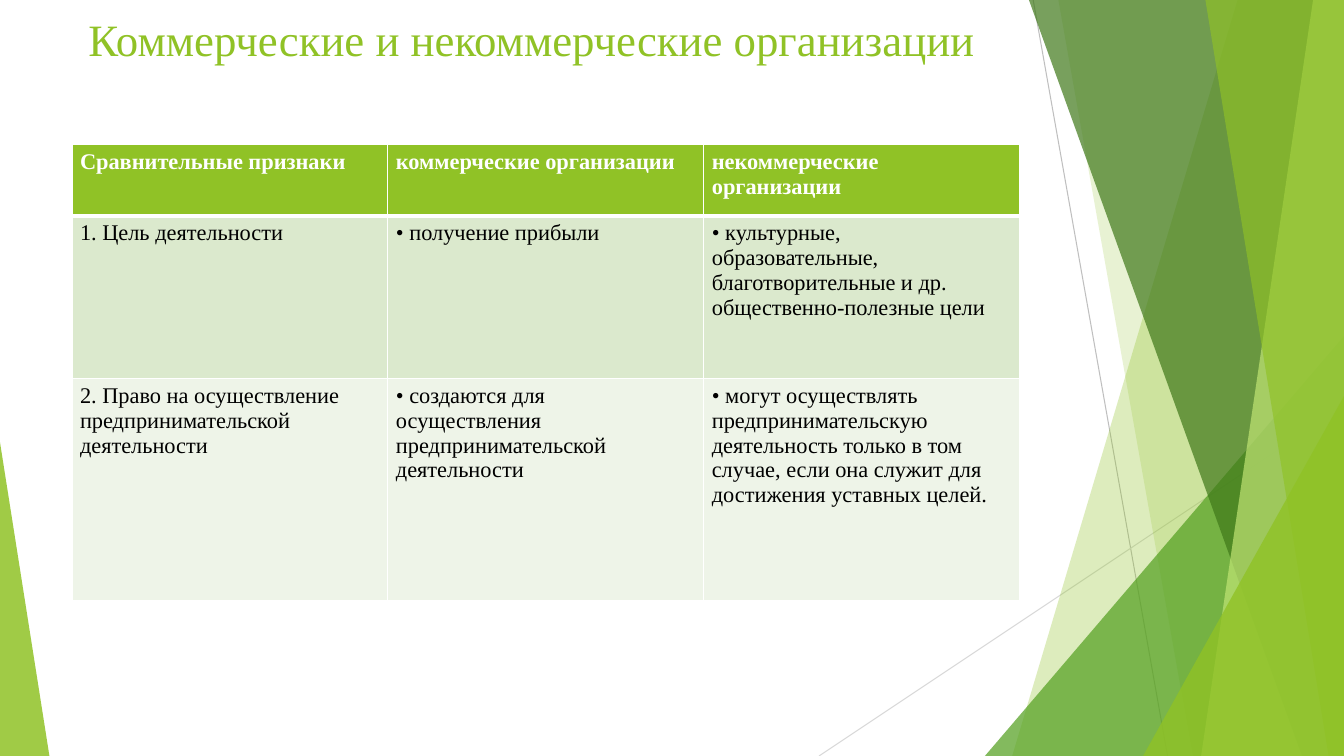
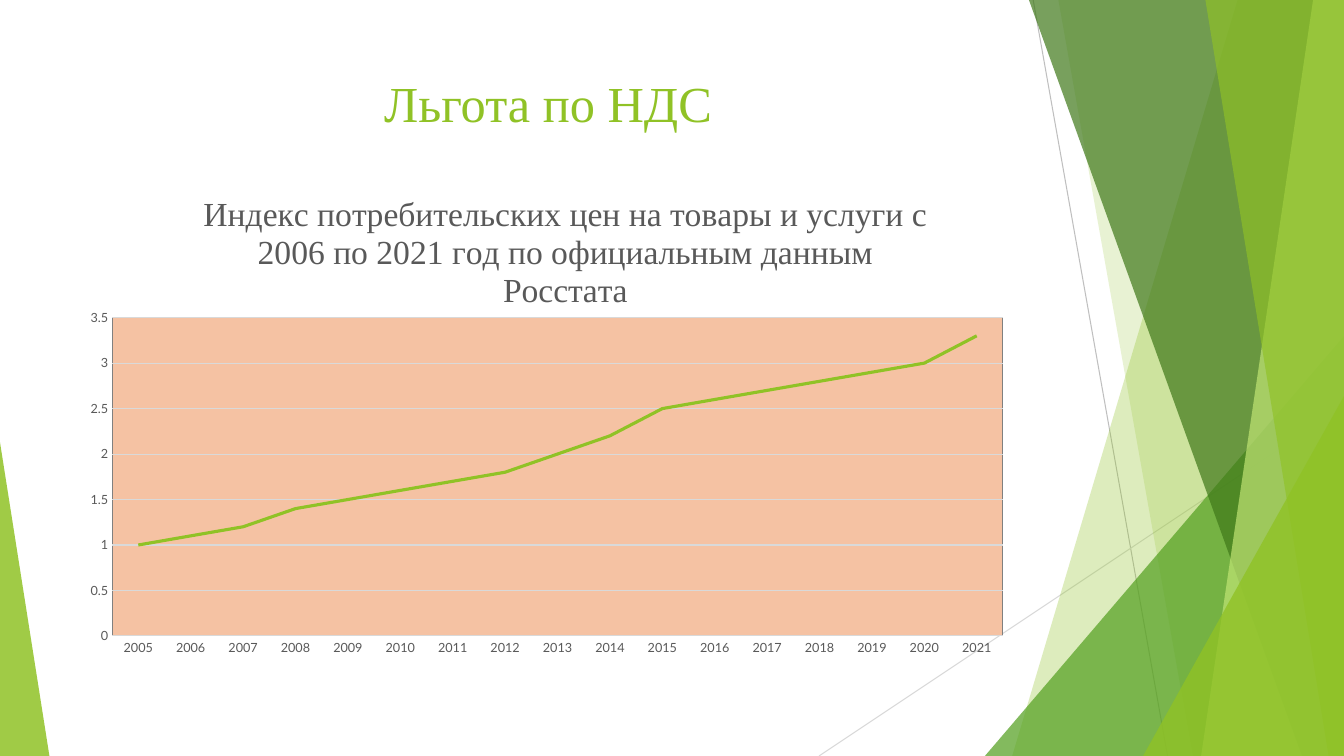
import lxml.etree
import pptx
import pptx.chart.data
import pptx.dml.color
import pptx.enum.chart
import pptx.enum.shapes
import pptx.enum.text
import pptx.oxml
import pptx.oxml.ns
import pptx.util

Pt = pptx.util.Pt
qn = pptx.oxml.ns.qn
ALIGN = pptx.enum.text.PP_ALIGN
NAMESPACES = pptx.oxml.ns.nsdecls("a", "c")

WIDTH, HEIGHT = 960, 540
GREEN, LEAF, FOREST, LIME = "90C226", "54A021", "3F7819", "C0E474"
WHITE, BLACK, GREY, SILVER, TEXT_GREY = "FFFFFF", "000000", "BFBFBF", "D9D9D9", "595959"
SERIF, SANS = "Times New Roman", "Lato"


def color(value):
    return pptx.dml.color.RGBColor.from_string(value)


def style_font(font, size, ink, name, bold=False):
    font.size = Pt(size)
    font.name = name
    font.bold = bold
    font.color.rgb = color(ink)


def write_text(frame, text, size=16, ink=BLACK, name=SERIF, bold=False, align=ALIGN.LEFT):
    para = frame.paragraphs[0]
    para.alignment = align
    span = para.add_run()
    span.text = text
    style_font(span.font, size, ink, name, bold)


def manual_layout(left, top, width=None, height=None):
    inner = "" if width is None else '<c:layoutTarget val="inner"/>'
    sizes = "" if width is None else f'<c:w val="{width}"/><c:h val="{height}"/>'
    return pptx.oxml.parse_xml(
        f'<c:layout {NAMESPACES}><c:manualLayout>{inner}<c:xMode val="edge"/><c:yMode val="edge"/>'
        f'<c:x val="{left}"/><c:y val="{top}"/>{sizes}</c:manualLayout></c:layout>')


def drop_layout(element):
    for layout in element.findall(qn("c:layout")):
        element.remove(layout)


class SlideBuilder:
    def __init__(self, deck):
        self.deck = deck
        self.page = None

    def start(self):
        self.page = self.deck.slides.add_slide(self.deck.slide_layouts[6])
        self.backdrop()

    def backdrop(self):
        self.line(738, 0, 834, HEIGHT, GREY)
        self.line(WIDTH, 290, 585, HEIGHT, SILVER)
        self.band(884, 723, GREEN, 30)
        self.band(756, 852, GREEN, 20)
        self.triangle(703.5, 240, 256.5, 1, LEAF, 72)
        self.band(735, 930, FOREST, 70)
        self.band(938, 858, LIME, 70)
        self.band(861, 949, GREEN, 65)
        self.triangle(816.5, 283, 143.5, 1, GREEN, 80)
        self.triangle(0, 316, 35.3, 0, GREEN, 85)

    def line(self, x1, y1, x2, y2, ink):
        connector = self.page.shapes.add_connector(
            pptx.enum.shapes.MSO_CONNECTOR.STRAIGHT, Pt(x1), Pt(y1), Pt(x2), Pt(y2))
        connector.line.color.rgb = color(ink)
        connector.line.width = Pt(0.75)
        lxml.etree.SubElement(connector.element.spPr, qn("a:effectLst"))

    def paint(self, shape, ink, opacity):
        shape.shadow.inherit = False
        shape.line.fill.background()
        shape.fill.solid()
        shape.fill.fore_color.rgb = color(ink)
        swatch = shape.element.spPr.find(qn("a:solidFill"))[0]
        lxml.etree.SubElement(swatch, qn("a:alpha"), val=str(opacity * 1000))

    def band(self, top_x, bottom_x, ink, opacity):
        outline = self.page.shapes.build_freeform(Pt(top_x), Pt(0))
        corners = [(WIDTH, 0), (WIDTH, HEIGHT), (bottom_x, HEIGHT)]
        outline.add_line_segments([(Pt(x), Pt(y)) for x, y in corners])
        self.paint(outline.convert_to_shape(), ink, opacity)

    def triangle(self, left, top, width, apex, ink, opacity):
        shape = self.page.shapes.add_shape(
            pptx.enum.shapes.MSO_SHAPE.ISOSCELES_TRIANGLE,
            Pt(left), Pt(top), Pt(width), Pt(HEIGHT - top))
        shape.adjustments[0] = apex
        self.paint(shape, ink, opacity)

    def title(self, text, left, top, **style):
        box = self.page.shapes.add_textbox(Pt(left), Pt(top), Pt(677), Pt(104))
        box.text_frame.word_wrap = True
        write_text(box.text_frame, text, ink=GREEN, **style)

    def border(self, cell, widths):
        properties = cell._tc.get_or_add_tcPr()
        for side, width in zip("LRTB", widths):
            properties.append(pptx.oxml.parse_xml(
                f'<a:ln{side} {NAMESPACES} w="{Pt(width)}"><a:solidFill>'
                f'<a:srgbClr val="{WHITE}"/></a:solidFill></a:ln{side}>'))

    def table(self, rows, heights, fills, left, top, width):
        table = self.page.shapes.add_table(
            len(rows), len(rows[0]), Pt(left), Pt(top), Pt(width), Pt(sum(heights))).table
        for column in table.columns:
            column.width = Pt(width / len(rows[0]))
        for index, (texts, height, fill) in enumerate(zip(rows, heights, fills)):
            header = index == 0
            table.rows[index].height = Pt(height)
            for cell, text in zip(table.rows[index].cells, texts):
                cell.margin_left = cell.margin_right = Pt(5.76)
                self.border(cell, (1, 1, 3 if index == 1 else 1, 3 if header else 1))
                cell.fill.solid()
                cell.fill.fore_color.rgb = color(fill)
                write_text(cell.text_frame, text, ink=WHITE if header else BLACK, bold=header)

    def line_chart(self, heading, categories, values, left, top, width, height):
        data = pptx.chart.data.CategoryChartData()
        data.categories = categories
        data.add_series("Series 1", values)
        chart = self.page.shapes.add_chart(
            pptx.enum.chart.XL_CHART_TYPE.LINE, Pt(left), Pt(top), Pt(width), Pt(height), data).chart
        style_font(chart.font, 10, BLACK, SANS)
        chart.has_legend = False
        chart.has_title = True
        write_text(chart.chart_title.text_frame, heading, size=24, ink=TEXT_GREY, align=ALIGN.CENTER)
        for axis in (chart.category_axis, chart.value_axis):
            axis.major_tick_mark = axis.minor_tick_mark = pptx.enum.chart.XL_TICK_MARK.NONE
            style_font(axis.tick_labels.font, 9, TEXT_GREY, SANS)
        value_axis = chart.value_axis
        value_axis.minimum_scale, value_axis.maximum_scale, value_axis.major_unit = 0, 3.5, 0.5
        value_axis.format.line.fill.background()
        for rule in (chart.category_axis.format.line, value_axis.major_gridlines.format.line):
            rule.color.rgb = color(SILVER)
            rule.width = Pt(0.75)
        series = chart.plots[0].series[0]
        series.smooth = False
        series.format.line.color.rgb = color(GREEN)
        series.format.line.width = Pt(2.25)
        chart.plots[0].vary_by_categories = False
        self.arrange_chart(chart)

    def arrange_chart(self, chart):
        heading = chart.chart_title.element
        drop_layout(heading)
        heading.find(qn("c:tx")).addnext(manual_layout(0.13, 0.05))
        area = chart.element.find(qn("c:chart")).find(qn("c:plotArea"))
        drop_layout(area)
        area.insert(0, manual_layout(0.04, 0.31, 0.94, 0.63))
        area.append(pptx.oxml.parse_xml(
            f'<c:spPr {NAMESPACES}><a:solidFill><a:srgbClr val="F5C2A3"/></a:solidFill>'
            f'<a:ln><a:solidFill><a:srgbClr val="808080"/></a:solidFill></a:ln></c:spPr>'))


def organizations(builder):
    builder.start()
    builder.title("Коммерческие и некоммерческие организации", 56, 5, size=32)
    rows = [
        ("Сравнительные признаки", "коммерческие организации", "некоммерческие организации"),
        ("1. Цель деятельности", "• получение прибыли",
         "• культурные, образовательные, благотворительные и др. общественно-полезные цели"),
        ("2. Право на осуществление предпринимательской деятельности",
         "• создаются для осуществления предпринимательской деятельности",
         "• могут осуществлять предпринимательскую деятельность только в том случае, "
         "если она служит для достижения уставных целей."),
    ]
    builder.table(rows, (51, 116, 159), (GREEN, "DBE9CD", "EEF4E8"), 51.4, 103.2, 677)


def tax_relief(builder):
    builder.start()
    builder.title("Льгота по НДС", 53, 48, size=36, align=ALIGN.CENTER)
    builder.line_chart(
        "Индекс потребительских цен на товары и услуги с 2006 по 2021 год "
        "по официальным данным Росстата",
        [str(year) for year in range(2005, 2022)],
        (1, 1.1, 1.2, 1.4, 1.5, 1.6, 1.7, 1.8, 2, 2.2, 2.5, 2.6, 2.7, 2.8, 2.9, 3, 3.3),
        53, 115, 677, 361)


def main():
    deck = pptx.Presentation()
    deck.slide_width, deck.slide_height = Pt(WIDTH), Pt(HEIGHT)
    builder = SlideBuilder(deck)
    organizations(builder)
    tax_relief(builder)
    deck.save("out.pptx")


if __name__ == "__main__":
    main()
